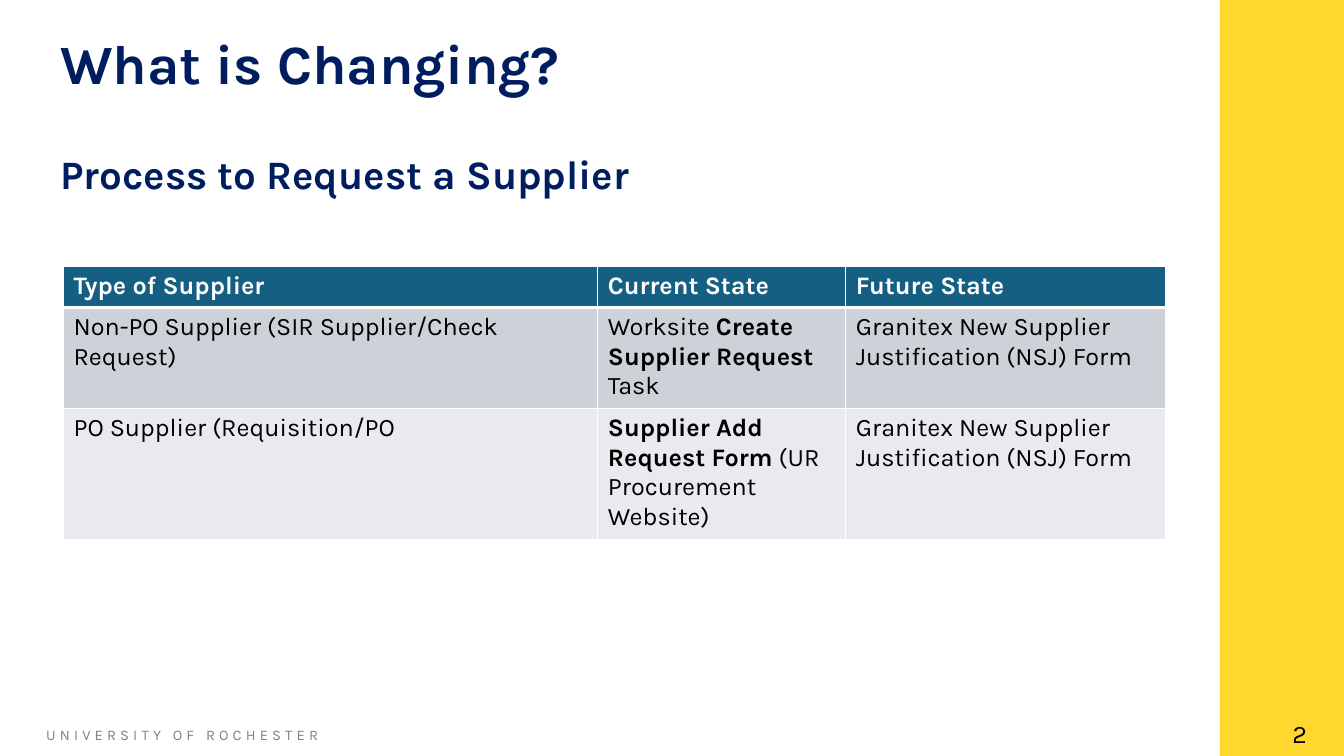
from dataclasses import dataclass

import pptx
import pptx.dml.color
import pptx.enum.shapes
import pptx.enum.text
import pptx.oxml
import pptx.oxml.ns
import pptx.util

Inches = pptx.util.Inches
Pt = pptx.util.Pt
RGBColor = pptx.dml.color.RGBColor

WHITE = RGBColor(0xFF, 0xFF, 0xFF)
BLACK = RGBColor(0x00, 0x00, 0x00)
GRAY = RGBColor(0x80, 0x80, 0x80)
NAVY = RGBColor(0x00, 0x1E, 0x5F)
YELLOW = RGBColor(0xFF, 0xD8, 0x2D)
TEAL = RGBColor(0x15, 0x60, 0x82)
ROW_FILLS = [TEAL, RGBColor(0xCC, 0xD2, 0xD8), RGBColor(0xE8, 0xEA, 0xED)]
FONT = "Karla"


@dataclass(frozen=True)
class Run:
    text: str
    bold: bool = False


@dataclass(frozen=True)
class TextLine:
    text: str
    size: float
    color: RGBColor
    bold: bool = False
    space_before: float = 0


@dataclass(frozen=True)
class Label:
    left: float
    top: float
    width: float
    height: float
    lines: list[TextLine]
    line_spacing: float = 1.0
    anchor: pptx.enum.text.MSO_ANCHOR = pptx.enum.text.MSO_ANCHOR.TOP
    letter_spacing: float = 0


LABELS = [
    Label(0.36, 7.15, 3, 0.29, [TextLine("UNIVERSITY OF ROCHESTER", 10.5, GRAY)],
          letter_spacing=3),
    Label(12.72, 7.08, 0.34, 0.4, [TextLine("2", 18, BLACK)]),
    Label(0.5, 0.38, 9.93, 1.57,
          [TextLine("What is Changing?", 39.6, NAVY, True),
           TextLine("Process to Request a Supplier", 28.8, NAVY, True, space_before=41.7)],
          line_spacing=0.9, anchor=pptx.enum.text.MSO_ANCHOR.MIDDLE),
]

COLUMN_WIDTHS = [5.3, 2.46, 3.17]
ROW_HEIGHT = 0.41
FUTURE_STATE = [Run("Granitex New Supplier Justification (NSJ) Form")]
TABLE_ROWS = [
    [[Run(heading, True)] for heading in ("Type of Supplier", "Current State", "Future State")],
    [[Run("Non-PO Supplier (SIR Supplier/Check Request)")],
     [Run("Worksite "), Run("Create Supplier Request", True), Run(" Task")],
     FUTURE_STATE],
    [[Run("PO Supplier (Requisition/PO")],
     [Run("Supplier Add Request Form", True), Run(" (UR Procurement Website)")],
     FUTURE_STATE],
]


def style_font(font: pptx.text.text.Font, size: float, color: RGBColor, bold: bool) -> None:
    font.name = FONT
    font.size = Pt(size)
    font.bold = bold
    font.color.rgb = color


def add_label(slide: pptx.slide.Slide, label: Label) -> None:
    text_box = slide.shapes.add_textbox(
        Inches(label.left), Inches(label.top), Inches(label.width), Inches(label.height))
    text_frame = text_box.text_frame
    text_frame.text = "\n".join(line.text for line in label.lines)
    text_frame.word_wrap = True
    text_frame.vertical_anchor = label.anchor
    for paragraph, line in zip(text_frame.paragraphs, label.lines):
        paragraph.line_spacing = label.line_spacing
        if line.space_before:
            paragraph.space_before = Pt(line.space_before)
        run = paragraph.runs[0]
        style_font(run.font, line.size, line.color, line.bold)
        if label.letter_spacing:
            run.font._element.set("spc", str(round(label.letter_spacing * 100)))


def add_side_band(slide: pptx.slide.Slide) -> None:
    band = slide.shapes.add_shape(
        pptx.enum.shapes.MSO_SHAPE.RECTANGLE,
        Inches(12.1), Inches(-0.02), Inches(1.23), Inches(7.52))
    band.shadow.inherit = False
    band.fill.solid()
    band.fill.fore_color.rgb = YELLOW
    band.line.fill.background()


def set_borders(cell: pptx.table._Cell, top: float, bottom: float) -> None:
    """Draw white cell borders; the side borders are one point wide."""
    properties = cell._tc.get_or_add_tcPr()
    for side, width in (("L", 1), ("R", 1), ("T", top), ("B", bottom)):
        properties.append(pptx.oxml.parse_xml(
            f'<a:ln{side} {pptx.oxml.ns.nsdecls("a")} w="{Pt(width)}">'
            f'<a:solidFill><a:srgbClr val="{WHITE}"/></a:solidFill></a:ln{side}>'))


def add_supplier_table(slide: pptx.slide.Slide) -> None:
    frame = slide.shapes.add_table(
        len(TABLE_ROWS), len(COLUMN_WIDTHS),
        Inches(0.63), Inches(2.64), Inches(sum(COLUMN_WIDTHS)),
        Inches(ROW_HEIGHT * len(TABLE_ROWS)))
    table = frame.table
    for column, width in zip(table.columns, COLUMN_WIDTHS):
        column.width = Inches(width)
    for row_index, row in enumerate(TABLE_ROWS):
        color = WHITE if row_index == 0 else BLACK
        for column_index, runs in enumerate(row):
            cell = table.cell(row_index, column_index)
            set_borders(cell, top=3 if row_index == 1 else 1, bottom=3 if row_index == 0 else 1)
            cell.fill.solid()
            cell.fill.fore_color.rgb = ROW_FILLS[row_index]
            paragraph = cell.text_frame.paragraphs[0]
            for part in runs:
                run = paragraph.add_run()
                run.text = part.text
                style_font(run.font, 18, color, part.bold)


def main() -> None:
    presentation = pptx.Presentation()
    presentation.slide_width = Inches(13.33)
    presentation.slide_height = Inches(7.5)
    slide = presentation.slides.add_slide(presentation.slide_layouts[6])
    add_side_band(slide)
    for label in LABELS:
        add_label(slide, label)
    add_supplier_table(slide)
    presentation.save("out.pptx")


if __name__ == "__main__":
    main()
